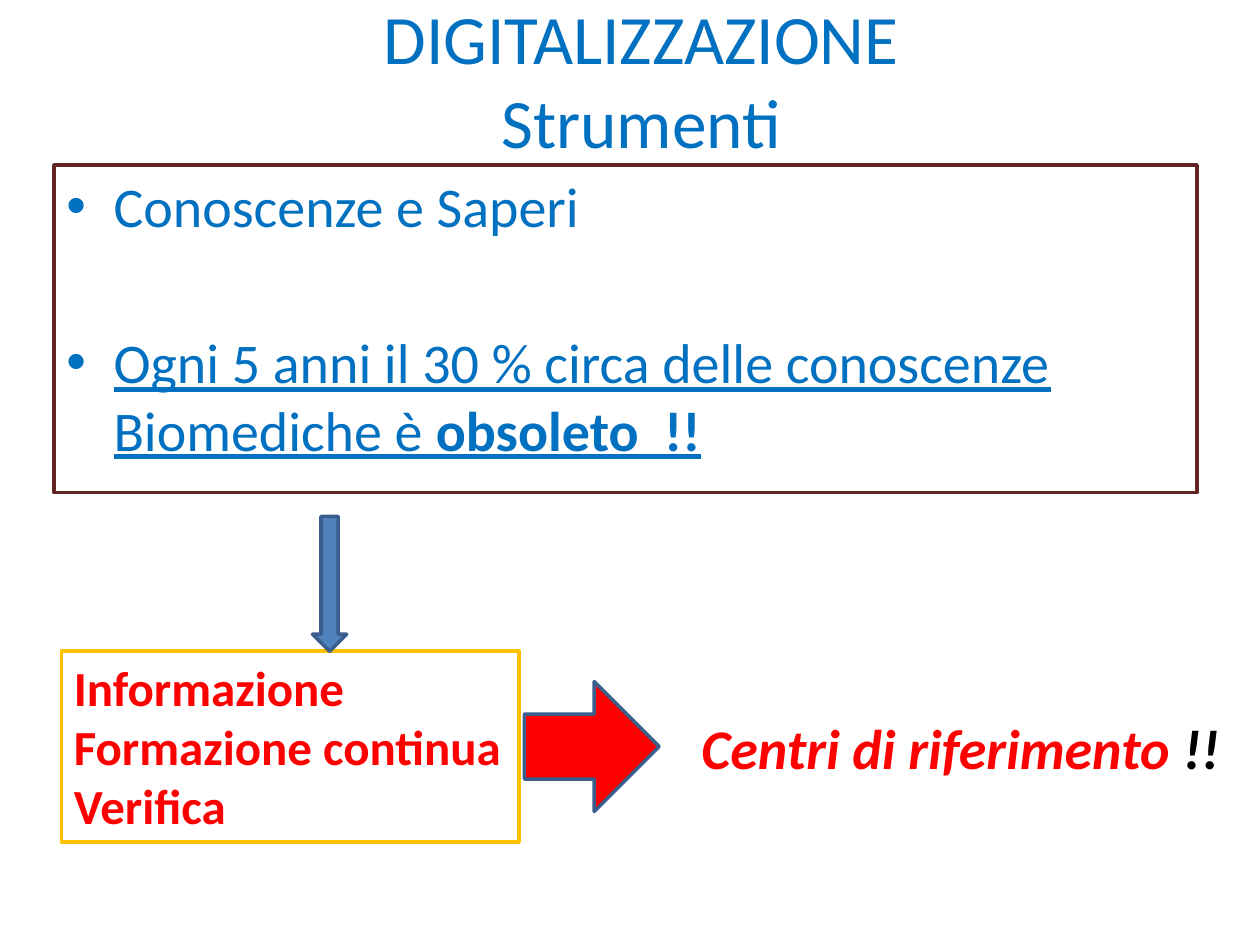
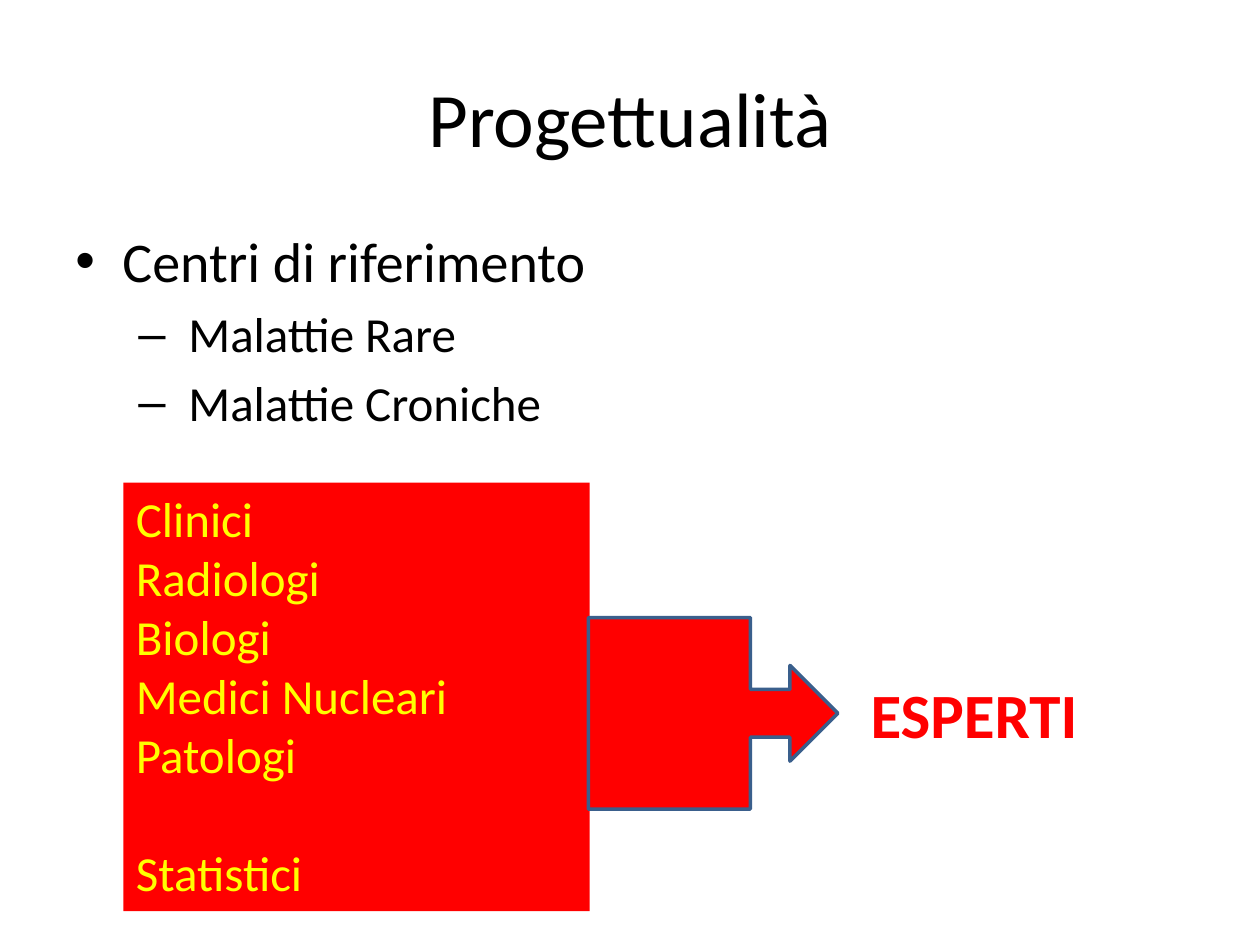
from lxml.etree import SubElement
from pptx import Presentation
from pptx.dml.color import RGBColor
from pptx.enum.shapes import MSO_SHAPE
from pptx.enum.text import MSO_ANCHOR, PP_ALIGN
from pptx.oxml.ns import qn
from pptx.util import Cm, Pt

BLUE = "0070C0"
RED = "FF0000"
YELLOW = "FFFF00"
AMBER = "FFC000"
MAROON = "632523"
STEEL = "4F81BD"
ARROW_EDGE = "3A5F8C"
BLACK = "000000"
FONT = "Calibri"


def color(value):
    """Turn a hex string into a colour."""
    return RGBColor.from_string(value)


class Deck:
    """Hold the shared style and the current slide."""

    def __init__(self):
        """Start a 4:3 presentation."""
        self.presentation = Presentation()
        self.presentation.slide_width = Cm(25.4)
        self.presentation.slide_height = Cm(19.05)
        self.slide = None

    def add_slide(self):
        """Add a blank slide and make it current."""
        self.slide = self.presentation.slides.add_slide(self.presentation.slide_layouts[6])

    def box(self, place, fill=None, line=None, wrap=True):
        """Add an empty text box and return its text frame."""
        shape = self.slide.shapes.add_textbox(*map(Cm, place))
        if fill:
            shape.fill.solid()
            shape.fill.fore_color.rgb = color(fill)
        if line:
            shape.line.color.rgb = color(line)
            shape.line.width = Pt(2.25)
        shape.text_frame.word_wrap = wrap
        return shape.text_frame

    def paragraph(self, frame, before=0):
        """Return the next paragraph of a frame."""
        first = frame.paragraphs[0]
        paragraph = frame.add_paragraph() if first.runs else first
        paragraph.space_before = Pt(before)
        return paragraph

    def run(self, paragraph, text, size, ink, bold=False, italic=False, underline=False):
        """Add one styled run."""
        run = paragraph.add_run()
        run.text = text
        font = run.font
        font.name, font.size, font.color.rgb = FONT, Pt(size), color(ink)
        font.bold, font.italic, font.underline = bold, italic, underline

    def title(self, place, lines, size, ink):
        """Add a centred title."""
        frame = self.box(place)
        frame.vertical_anchor = MSO_ANCHOR.MIDDLE
        paragraph = self.paragraph(frame)
        paragraph.alignment = PP_ALIGN.CENTER
        for number, line in enumerate(lines):
            if number:
                paragraph.add_line_break()
            self.run(paragraph, line, size, ink)

    def bullet(self, frame, mark="•", margin=0.95, hanging=0.95, before=0):
        """Add a bulleted paragraph with a hanging indent."""
        paragraph = self.paragraph(frame, before)
        properties = paragraph._p.get_or_add_pPr()
        properties.set("marL", str(Cm(margin)))
        properties.set("indent", str(-Cm(hanging)))
        SubElement(properties, qn("a:buFont"), typeface="Arial")
        SubElement(properties, qn("a:buChar"), char=mark)
        return paragraph

    def lines(self, frame, texts, size, ink, bold=False):
        """Add one plain paragraph for each text."""
        for text in texts:
            self.run(self.paragraph(frame), text, size, ink, bold)

    def arrow(self, kind, place, fill):
        """Add an outlined block arrow."""
        shape = self.slide.shapes.add_shape(kind, *map(Cm, place))
        shape.shadow.inherit = False
        shape.fill.solid()
        shape.fill.fore_color.rgb = color(fill)
        shape.line.color.rgb = color(ARROW_EDGE)
        shape.line.width = Pt(2)


def tools_slide(deck):
    """Build the slide on the tools of digitalisation."""
    deck.add_slide()
    deck.title((1.5, 0, 22.86, 3.18), ["DIGITALIZZAZIONE", "Strumenti"], 39.6, BLUE)
    knowledge = deck.box((1.09, 3.33, 23.04, 6.6), line=MAROON)
    deck.run(deck.bullet(knowledge), "Conoscenze e Saperi", 32, BLUE)
    obsolescence = deck.bullet(knowledge, before=51)
    deck.run(obsolescence, "Ogni 5 anni il 30 % circa delle conoscenze Biomediche è ",
             32, BLUE, underline=True)
    deck.run(obsolescence, "obsoleto  !!", 32, BLUE, bold=True, underline=True)

    training = deck.box((1.24, 13.13, 9.22, 3.84), line=AMBER, wrap=False)
    deck.lines(training, ["Informazione", "Formazione continua", "Verifica"], 28, RED, bold=True)
    deck.arrow(MSO_SHAPE.DOWN_ARROW, (6.3, 10.41, 0.69, 2.72), STEEL)
    deck.arrow(MSO_SHAPE.RIGHT_ARROW, (10.57, 13.74, 2.72, 2.62), RED)
    centres = deck.paragraph(deck.box((13.89, 14.25, 11.56, 1.63)))
    deck.run(centres, "Centri di riferimento ", 32, RED, bold=True, italic=True)
    deck.run(centres, "!!", 32, BLACK, bold=True, italic=True)


def planning_slide(deck):
    """Build the slide on planning and experts."""
    deck.add_slide()
    deck.title((1.27, 0.76, 22.86, 3.18), ["Progettualità"], 44, BLACK)
    centres = deck.box((1.27, 4.45, 11.02, 12.57))
    deck.run(deck.bullet(centres), "Centri di riferimento", 32, BLACK)
    for disease in ("Malattie Rare", "Malattie Croniche"):
        item = deck.bullet(centres, "–", margin=2.28, hanging=1.01, before=5.6)
        deck.run(item, disease, 28, BLACK)

    specialists = deck.box((2.49, 9.73, 9.4, 8.64), fill=RED)
    deck.lines(specialists, ["Clinici", "Radiologi", "Biologi", "Medici Nucleari", "Patologi"],
               28, YELLOW)
    deck.run(deck.paragraph(specialists, before=34), "Statistici", 28, YELLOW)
    deck.arrow(MSO_SHAPE.RIGHT_ARROW_CALLOUT, (11.86, 12.45, 5.03, 3.86), RED)
    deck.lines(deck.box((17.3, 13.49, 4.72, 1.8), wrap=False), ["ESPERTI"], 36, RED, bold=True)


def main():
    """Build and save the slides."""
    deck = Deck()
    tools_slide(deck)
    planning_slide(deck)
    deck.presentation.save("out.pptx")


if __name__ == "__main__":
    main()
